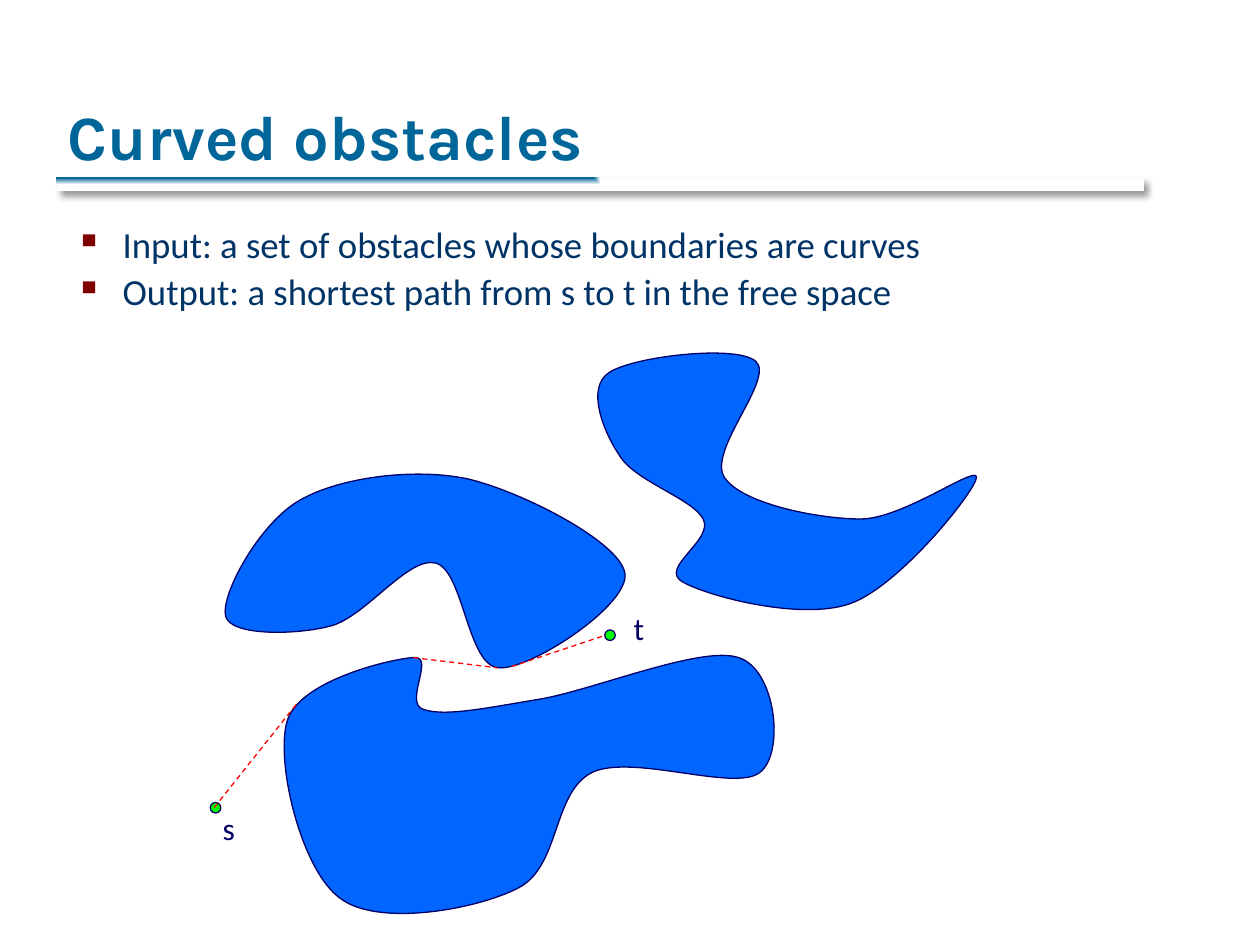
"""Build a slide on shortest paths among curved obstacles."""
from pptx import Presentation, util as u
from pptx.dml.color import RGBColor
from pptx.enum import dml, shapes, text
from pptx.oxml import parse_xml
from pptx.oxml.ns import nsdecls, qn

TEAL = RGBColor(0x00, 0x66, 0x99)
SLATE = RGBColor(0x00, 0x33, 0x66)
NAVY = RGBColor(0x00, 0x00, 0x66)
BLUE = RGBColor(0x00, 0x66, 0xFF)
GREEN = RGBColor(0x00, 0xFF, 0x00)
RED = RGBColor(0xFF, 0x00, 0x00)
MAROON = RGBColor(0x80, 0x00, 0x00)
WHITE = RGBColor(0xFF, 0xFF, 0xFF)

ARCH = [
    (171.4, 285.8),
    (148.3, 298.8), (126, 339.8), (128.9, 352.1),
    (131.8, 363.6), (169.2, 362.9), (188.6, 357.8),
    (208.8, 352.8), (233.3, 317.5), (249.1, 321.8),
    (265, 326.2), (267.1, 380.9), (285.1, 381.6),
    (303.1, 383), (360, 345.6), (357.1, 327.6),
    (354.2, 309.6), (298.1, 280.8), (267.1, 273.6),
    (236.2, 267.1), (193.7, 272.9), (171.4, 285.8),
]
BOOT = [
    (236.2, 375.8),
    (249.1, 374.4), (230.4, 401.8), (241.9, 405.4),
    (254.2, 409.7), (277.9, 404.6), (308.2, 399.6),
    (338.4, 394.6), (401, 368.6), (421.9, 375.8),
    (443.5, 382.3), (448.6, 430.6), (434.2, 441.4),
    (420.5, 452.9), (361.4, 430.6), (338.4, 441.4),
    (315.4, 452.9), (320.4, 495.4), (295.9, 507.6),
    (272.2, 519.8), (216, 529.9), (194.4, 513.4),
    (172.1, 497.5), (157, 434.9), (164.2, 411.8),
    (171.4, 388.8), (223.2, 376.6), (236.2, 375.8),
]
HOOK = [
    (347.8, 213.1),
    (334.8, 221.8), (344.9, 247), (354.2, 260.6),
    (362.9, 275), (396, 285.1), (401.8, 296.6),
    (408.2, 308.9), (375.8, 324.7), (390.2, 332.6),
    (403.9, 340.6), (457.9, 355), (486, 344.9),
    (514.1, 334.8), (557.3, 280.8), (558, 272.9),
    (558.7, 265), (516.2, 296.6), (491.8, 296.6),
    (468, 296.6), (424.1, 288), (414, 272.9),
    (403.9, 257.8), (442.8, 216.7), (432, 206.6),
    (421.2, 196.6), (360.7, 203.8), (347.8, 213.1),
]
PATH = [
    ((122.4, 461.5), (169.9, 401.8)),
    ((236.2, 375.8), (284.4, 381.6)),
    ((292.3, 380.9), (346.3, 362.9)),
]


class Deck:
    """Hold the style and the current slide, and draw each kind of element."""

    font = "Calibri"
    line_width = 0.75

    def __init__(self, prs):
        self.s = prs.slides.add_slide(prs.slide_layouts[6])

    def outline(self, sp, fill):
        sp.shadow.inherit = False
        sp.fill.solid()
        sp.fill.fore_color.rgb = fill
        sp.line.color.rgb = NAVY
        sp.line.width = u.Pt(self.line_width)

    def text(self, box, lines, size, color, font=font, bold=False, wrap=True):
        tf = self.s.shapes.add_textbox(*map(u.Pt, box)).text_frame
        tf.word_wrap = wrap
        tf.text = "\n".join(lines)
        for p in tf.paragraphs:
            f = p.runs[0].font
            f.name, f.size, f.bold = font, u.Pt(size), bold
            f.color.rgb = color
        return tf

    def title(self, box, line):
        tf = self.text(box, [line], 36, TEAL, "Karla", True)
        tf.vertical_anchor = text.MSO_ANCHOR.BOTTOM
        tf.paragraphs[0].runs[0].font._element.set("spc", "10")

    def bullets(self, box, lines):
        for p in self.text(box, lines, 21, SLATE).paragraphs:
            p.line_spacing = 0.9
            p.space_before = u.Pt(4.2)
            pr = p._p.get_or_add_pPr()
            pr.set("marL", str(u.Pt(27)))
            pr.set("indent", str(u.Pt(-27)))
            pr.append(parse_xml(f'<a:buClr {nsdecls("a")}><a:srgbClr val="{MAROON}"/></a:buClr>'))
            pr.append(parse_xml(f'<a:buChar {nsdecls("a")} char="▪"/>'))

    def divider(self, box):
        sp = self.s.shapes.add_shape(shapes.MSO_SHAPE.RECTANGLE, *map(u.Pt, box))
        sp.line.fill.background()
        sp.fill.background()
        sp.shadow.inherit = False
        pr = sp._element.spPr
        pr.replace(pr.find(qn("a:noFill")), parse_xml(
            f'<a:gradFill {nsdecls("a")} rotWithShape="0"><a:gsLst>'
            f'<a:gs pos="0"><a:srgbClr val="{TEAL}"/></a:gs>'
            f'<a:gs pos="100000"><a:srgbClr val="{WHITE}"/></a:gs></a:gsLst>'
            '<a:path path="rect"><a:fillToRect r="100000" b="100000"/></a:path></a:gradFill>'))
        pr.find(qn("a:effectLst")).append(parse_xml(
            f'<a:outerShdw {nsdecls("a")} blurRad="{u.Pt(4)}" dist="{u.Pt(3)}" dir="2700000" '
            'algn="tl" rotWithShape="0"><a:srgbClr val="000000"><a:alpha val="40000"/>'
            '</a:srgbClr></a:outerShdw>'))

    def curve(self, points):
        start, *rest = [(u.Pt(x), u.Pt(y)) for x, y in points]
        fb = self.s.shapes.build_freeform(*start)
        fb.add_line_segments(rest, close=True)
        sp = fb.convert_to_shape()
        lines = list(sp._element.iter(qn("a:lnTo")))
        for i in range(0, len(rest), 3):
            bez = parse_xml(f'<a:cubicBezTo {nsdecls("a")}/>')
            lines[i].addprevious(bez)
            for ln in lines[i:i + 3]:
                bez.append(ln[0])
                ln.getparent().remove(ln)
        self.outline(sp, BLUE)

    def dot(self, x, y, size=6):
        box = map(u.Pt, (x, y, size, size))
        self.outline(self.s.shapes.add_shape(shapes.MSO_SHAPE.OVAL, *box), GREEN)

    def label(self, box, name):
        tf = self.text(box, [name], 18, NAVY, wrap=False)
        tf.auto_size = text.MSO_AUTO_SIZE.SHAPE_TO_FIT_TEXT

    def dashed(self, start, end):
        c = self.s.shapes.add_connector(
            shapes.MSO_CONNECTOR.STRAIGHT, *map(u.Pt, start + end))
        c.line.color.rgb = RED
        c.line.width = u.Pt(self.line_width)
        c.line.dash_style = dml.MSO_LINE.DASH
        c._element.spPr.append(parse_xml(f'<a:effectLst {nsdecls("a")}/>'))


def main():
    prs = Presentation()
    prs.slide_width, prs.slide_height = u.Pt(720), u.Pt(540)
    d = Deck(prs)
    d.divider((32.4, 101.5, 621.4, 7.9))
    d.title((31.7, 12.2, 612, 90), "Curved obstacles")
    for points in (ARCH, BOOT, HOOK):
        d.curve(points)
    d.dot(345.6, 360)
    d.dot(120.2, 458.6)
    d.label((120.2, 458.6, 23.8, 28.8), "s")
    d.label((355, 344.2, 19.4, 28.8), "t")
    for start, end in PATH:
        d.dashed(start, end)
    d.bullets((36, 126, 642.2, 65.5), [
        "Input: a set of obstacles whose boundaries are curves",
        "Output: a shortest path from s to t in the free space",
    ])
    prs.save("out.pptx")


if __name__ == "__main__":
    main()
